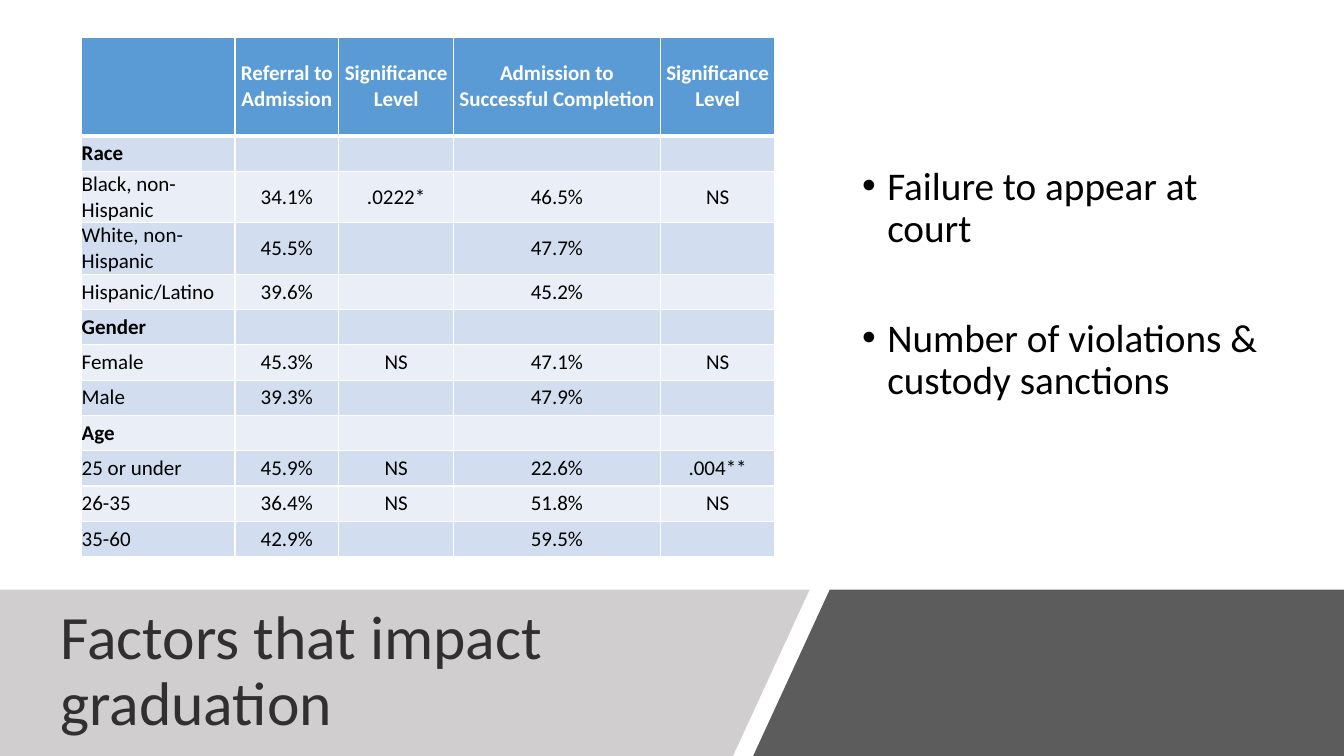
from dataclasses import dataclass

from lxml.etree import SubElement
from pptx import Presentation
from pptx.dml.color import RGBColor as Rgb
from pptx.enum.text import MSO_ANCHOR as Anchor, MSO_AUTO_SIZE as AutoSize, PP_ALIGN as Align
from pptx.oxml.ns import qn
from pptx.util import Inches, Pt

SLIDE_W, SLIDE_H = Inches(13.33), Inches(7.5)


@dataclass(frozen=True)
class Theme:
    font: str = "Calibri"
    title_size: float = 44
    factor_size: float = 28
    table_size: float = 15
    title: str = "303030"
    ink: str = "000000"
    white: str = "FFFFFF"
    header: str = "5B9BD5"
    stripes: tuple = ("D2DEEF", "EAEFF7")
    light_band: str = "D0CECE"
    dark_band: str = "404040"
    dark_opacity: int = 85


@dataclass(frozen=True)
class Box:
    """A region on a grid of 100 columns by 100 rows."""
    col: float
    row: float
    cols: float
    rows: float

    def place(self):
        return across(self.col), down(self.row), across(self.cols), down(self.rows)


THEME = Theme()
TABLE_BOX = Box(6.08, 4.93, 51.6, 64.4)
FACTORS_BOX = Box(63.39, 18.4, 32.86, 31.6)
BAND_BOX = Box(0, 78, 100, 22)
TITLE_BOX = Box(3.75, 80.93, 48.54, 16)

TITLE = "Factors that impact graduation"
FACTORS = ["Failure to appear at court", "Number of violations & custody sanctions"]
HEADINGS = ["", "Referral to Admission", "Significance Level",
            "Admission to Successful Completion", "Significance Level"]
GROUPS = {
    "Race": [
        ["Black, non-Hispanic", "34.1%", ".0222*", "46.5%", "NS"],
        ["White, non-Hispanic", "45.5%", "", "47.7%", ""],
        ["Hispanic/Latino", "39.6%", "", "45.2%", ""],
    ],
    "Gender": [
        ["Female", "45.3%", "NS", "47.1%", "NS"],
        ["Male", "39.3%", "", "47.9%", ""],
    ],
    "Age": [
        ["25 or under", "45.9%", "NS", "22.6%", ".004**"],
        ["26-35", "36.4%", "NS", "51.8%", "NS"],
        ["35-60", "42.9%", "", "59.5%", ""],
    ],
}
COLUMN_WEIGHTS = [1.52, 1.03, 1.14, 2.05, 1.14]
HEADER_WEIGHT = 2.8  # heading row height, in body rows


def across(columns):
    return round(SLIDE_W * columns / 100)


def down(rows):
    return round(SLIDE_H * rows / 100)


def style_runs(paragraph, size, color, bold=False):
    for run in paragraph.runs:
        run.font.name = THEME.font
        run.font.size = Pt(size)
        run.font.bold = bold
        run.font.color.rgb = Rgb.from_string(color)


def add_band(slide, corners, color, opacity=100):
    points = [(across(col), down(row)) for col, row in corners]
    builder = slide.shapes.build_freeform(*points[0])
    builder.add_line_segments(points[1:], close=True)
    band = builder.convert_to_shape()
    band.shadow.inherit = False
    band.line.fill.background()
    band.fill.solid()
    band.fill.fore_color.rgb = Rgb.from_string(color)
    if opacity < 100:
        tint = band.fill._xPr.find(".//" + qn("a:srgbClr"))
        SubElement(tint, qn("a:alpha"), val=str(opacity * 1000))


def add_bands(slide, box):
    """Two slanted bands with a narrow gap between them."""
    split, lean, gap = box.col + box.cols * 0.6024, 5.7, 1.5
    top, bottom, right = box.row, box.row + box.rows, box.col + box.cols
    add_band(slide, [(split + gap, top), (right, top), (right, bottom),
                     (split + gap - lean, bottom)], THEME.dark_band, THEME.dark_opacity)
    add_band(slide, [(box.col, top), (split, top), (split - lean, bottom),
                     (box.col, bottom)], THEME.light_band)


def fill_placeholder(slide, holder, box, texts, anchor):
    """Moves a placeholder to its box, in front of the bands, and sets its paragraphs."""
    slide.shapes._spTree.append(holder._element)
    holder.left, holder.top, holder.width, holder.height = box.place()
    frame = holder.text_frame
    frame.text = "\n".join(texts)
    frame.word_wrap = True
    frame.auto_size = AutoSize.NONE
    frame.vertical_anchor = anchor
    for paragraph in frame.paragraphs:
        paragraph.alignment = Align.LEFT
        paragraph.line_spacing = 0.9
        paragraph.space_before = Pt(0)
    return frame


def add_title(slide, box):
    frame = fill_placeholder(slide, slide.shapes.title, box, [TITLE], Anchor.MIDDLE)
    style_runs(frame.paragraphs[0], THEME.title_size, THEME.title)


def add_factors(slide, box):
    frame = fill_placeholder(slide, slide.placeholders[1], box, FACTORS, Anchor.TOP)
    frame.margin_top = down(3.6)
    for index, factor in enumerate(frame.paragraphs):
        style_runs(factor, THEME.factor_size, THEME.ink)
        factor.space_before = Pt(48 if index else 0)
        hanging = factor._p.get_or_add_pPr()
        hanging.set("marL", str(Inches(0.25)))
        hanging.set("indent", str(-Inches(0.25)))
        SubElement(hanging, qn("a:buChar"), char="•")


def set_borders(cell, top, bottom):
    widths = {"a:lnL": 1, "a:lnR": 1, "a:lnT": top, "a:lnB": bottom}
    for side, width in widths.items():
        edge = SubElement(cell._tc.get_or_add_tcPr(), qn(side), w=str(Pt(width)))
        SubElement(SubElement(edge, qn("a:solidFill")), qn("a:srgbClr"), val=THEME.white)


def add_rates_table(slide, box):
    rows = [HEADINGS]
    for group, members in GROUPS.items():
        rows += [[group] + [""] * (len(HEADINGS) - 1), *members]
    table = slide.shapes.add_table(len(rows), len(HEADINGS), *box.place()).table
    table.horz_banding = False

    # Column widths and row heights
    for column, weight in zip(table.columns, COLUMN_WEIGHTS):
        column.width = across(box.cols * weight / sum(COLUMN_WEIGHTS))
    row_share = box.rows / (HEADER_WEIGHT + len(rows) - 1)
    for index, row in enumerate(table.rows):
        row.height = down(row_share * (1 if index else HEADER_WEIGHT))

    # Cells
    for r, values in enumerate(rows):
        is_header = r == 0
        color = THEME.header if is_header else THEME.stripes[(r - 1) % 2]
        for c, value in enumerate(values):
            cell = table.cell(r, c)
            set_borders(cell, 3 if r == 1 else 1, 3 if is_header else 1)
            cell.fill.solid()
            cell.fill.fore_color.rgb = Rgb.from_string(color)
            cell.margin_left = cell.margin_right = cell.margin_top = cell.margin_bottom = 0
            cell.vertical_anchor = Anchor.MIDDLE
            entry = cell.text_frame.paragraphs[0]
            entry.text = value
            entry.alignment = Align.CENTER if c else Align.LEFT
            style_runs(entry, THEME.table_size, THEME.white if is_header else THEME.ink,
                       bold=is_header or value in GROUPS)


def main():
    deck = Presentation()
    deck.slide_width, deck.slide_height = SLIDE_W, SLIDE_H
    slide = deck.slides.add_slide(deck.slide_layouts[1])
    add_bands(slide, BAND_BOX)
    add_title(slide, TITLE_BOX)
    add_factors(slide, FACTORS_BOX)
    add_rates_table(slide, TABLE_BOX)
    deck.save("out.pptx")


if __name__ == "__main__":
    main()
